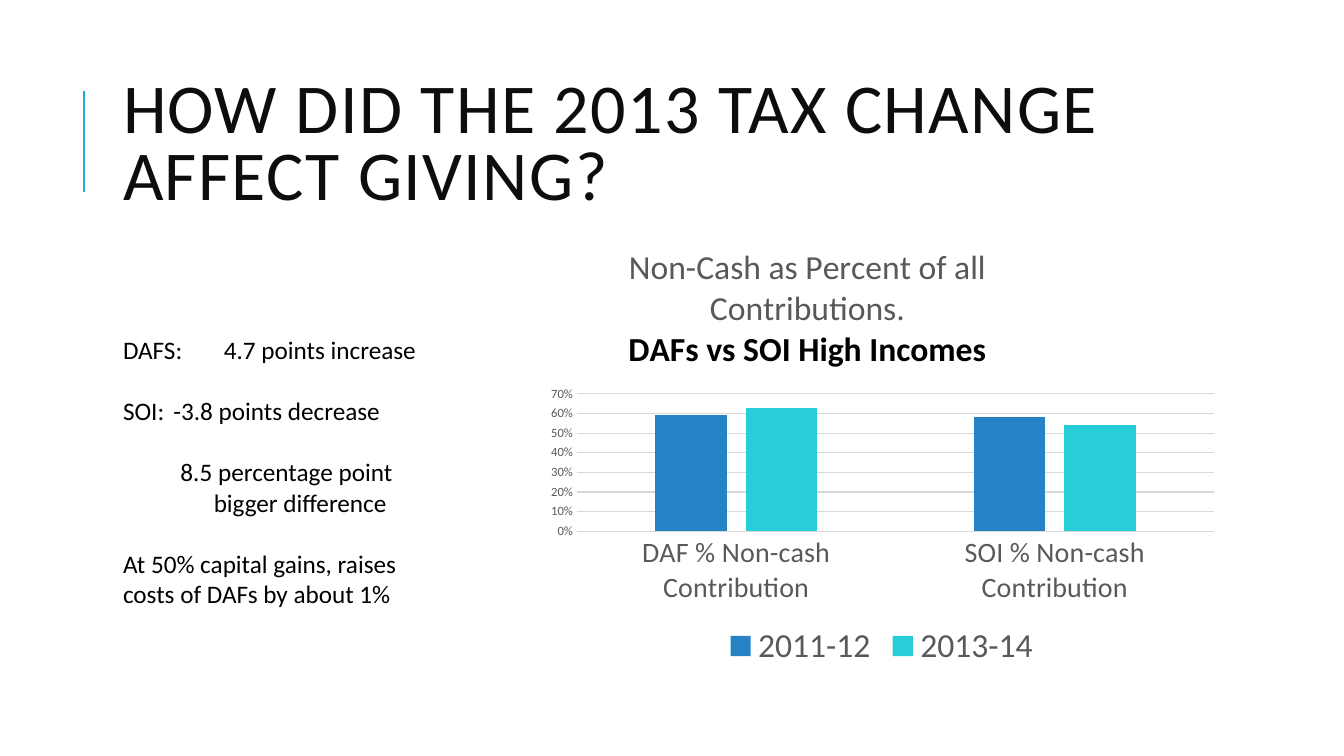
from lxml import etree
from pptx import Presentation
from pptx.chart.data import CategoryChartData
from pptx.dml.color import RGBColor
from pptx.enum.chart import XL_CHART_TYPE, XL_LEGEND_POSITION, XL_TICK_MARK
from pptx.enum.shapes import MSO_CONNECTOR
from pptx.enum.text import MSO_ANCHOR, MSO_AUTO_SIZE, PP_ALIGN
from pptx.oxml.ns import qn
from pptx.util import Pt

COLUMNS = XL_CHART_TYPE.COLUMN_CLUSTERED
BOTTOM = XL_LEGEND_POSITION.BOTTOM
NO_TICK = XL_TICK_MARK.NONE
STRAIGHT = MSO_CONNECTOR.STRAIGHT
TOP, MIDDLE = MSO_ANCHOR.TOP, MSO_ANCHOR.MIDDLE
NO_AUTOFIT = MSO_AUTO_SIZE.NONE
LEFT, CENTER = PP_ALIGN.LEFT, PP_ALIGN.CENTER

FONT = "Calibri"
GREY, GRID = "595959", "D9D9D9"
LINE_HEIGHT = 22  # points, one line of body text

# text, left margin, first-line indent, tab stop (px), lines of space before
FINDINGS = [
    ("DAFS:\t4.7 points increase", 0, 0, 70, 0),
    ("SOI:\t-3.8 points decrease", 0, 0, 58, 1),
    ("8.5 percentage point\vbigger difference", 90, -33, None, 1),
    ("At 50% capital gains, raises costs of DAFs by about 1%", 0, 0, None, 1),
]
CATEGORIES = ["DAF % Non-cash Contribution", "SOI % Non-cash Contribution"]
SERIES = [
    ("2011-12", (0.59, 0.58), "2683C6"),
    ("2013-14", (0.63, 0.54), "27CED7"),
]
CHART_TITLE = [
    ("Non-Cash as Percent of all", GREY, False),
    ("Contributions.", GREY, False),
    ("DAFs vs SOI High Incomes", "000000", True),
]


def px(n):
    return n * 9144  # 100 px to the inch


def rgb(value):
    return RGBColor.from_string(value)


def set_attrs(obj, values):
    for name, value in values.items():
        setattr(obj, name, value)


def style_font(font, size, color, bold=False):
    set_attrs(font, {"name": FONT, "size": Pt(size), "bold": bold})
    font.color.rgb = rgb(color)


def style_line(line, color, width):
    line.color.rgb = rgb(color)
    line.width = Pt(width)


def place(sp, left, top, width, height, anchor):
    set_attrs(sp, {"left": px(left), "top": px(top),
                   "width": px(width), "height": px(height)})
    tf = sp.text_frame
    set_attrs(tf, {"word_wrap": True, "auto_size": NO_AUTOFIT,
                   "vertical_anchor": anchor})
    return tf


def add_rule(s, x, top, bottom):
    rule = s.shapes.add_connector(STRAIGHT, px(x), px(top), px(x), px(bottom))
    style_line(rule.line, "1CADE4", 1.5)
    etree.SubElement(rule._element.spPr, qn("a:effectLst"))


def add_title(s, text):
    tf = place(s.shapes.title, 112, 64, 1063, 164, MIDDLE)
    p = tf.paragraphs[0]
    set_attrs(p, {"text": text, "alignment": LEFT, "line_spacing": 0.8})
    style_font(p.runs[0].font, 50, "0D0D0D")
    p.runs[0].font._element.set("spc", "100")


def add_findings(s):
    tf = place(s.placeholders[1], 112, 327, 329, 283, TOP)
    for i, (text, margin, indent, tab, gap) in enumerate(FINDINGS):
        p = tf.add_paragraph() if i else tf.paragraphs[0]
        set_attrs(p, {"text": text, "alignment": LEFT,
                      "space_before": Pt(gap * LINE_HEIGHT)})
        for r in p.runs:
            style_font(r.font, 18, "000000")
        # Plain paragraphs with indents and tab stops
        pPr = p._p.get_or_add_pPr()
        pPr.set("marL", str(px(margin)))
        pPr.set("indent", str(px(indent)))
        etree.SubElement(pPr, qn("a:buNone"))
        if tab:
            tabs = etree.SubElement(pPr, qn("a:tabLst"))
            etree.SubElement(tabs, qn("a:tab"), pos=str(px(tab)), algn="l")


def set_layout(parent, index, **values):
    """Fix the place of a chart part, in fractions of the chart."""
    for old in parent.findall(qn("c:layout")):
        parent.remove(old)
    layout = etree.Element(qn("c:layout"))
    manual = etree.SubElement(layout, qn("c:manualLayout"))
    for name, value in values.items():
        etree.SubElement(manual, qn("c:" + name), val=str(value))
    parent.insert(index, layout)


def add_chart_title(chart):
    tf = chart.chart_title.text_frame
    for i, (text, color, bold) in enumerate(CHART_TITLE):
        p = tf.add_paragraph() if i else tf.paragraphs[0]
        set_attrs(p, {"text": text, "alignment": CENTER})
        style_font(p.runs[0].font, 24, color, bold)
    chart.chart_title.include_in_layout = False
    set_layout(chart.chart_title._element, 1,
               xMode="edge", yMode="edge", x=0.13, y=0.03)


def style_axes(chart):
    cat, val = chart.category_axis, chart.value_axis
    for axis, size in ((cat, 20), (val, 9)):
        set_attrs(axis, {"major_tick_mark": NO_TICK, "minor_tick_mark": NO_TICK})
        style_font(axis.tick_labels.font, size, GREY)
    style_line(cat.format.line, GRID, 0.75)
    val.format.line.fill.background()
    set_attrs(val, {"minimum_scale": 0, "maximum_scale": 0.7, "major_unit": 0.1})
    set_attrs(val.tick_labels, {"number_format": "0%",
                                "number_format_is_linked": False})
    style_line(val.major_gridlines.format.line, GRID, 0.75)


def add_giving_chart(s):
    data = CategoryChartData(number_format="0%")
    data.categories = CATEGORIES
    for name, values, _ in SERIES:
        data.add_series(name, values)
    chart = s.shapes.add_chart(COLUMNS, px(531), px(228), px(687), px(440),
                               data).chart
    style_font(chart.font, 10, "000000")
    add_chart_title(chart)
    style_axes(chart)

    # Columns
    plot = chart.plots[0]
    set_attrs(plot, {"gap_width": 219, "overlap": -27, "vary_by_categories": False})
    for series, (_, _, color) in zip(plot.series, SERIES):
        series.format.fill.solid()
        series.format.fill.fore_color.rgb = rgb(color)
    set_layout(chart._chartSpace.chart.plotArea, 0, layoutTarget="inner",
               xMode="edge", yMode="edge", x=0.06, y=0.37, w=0.92, h=0.31)

    # Legend
    chart.has_legend = True
    set_attrs(chart.legend, {"position": BOTTOM, "include_in_layout": False})
    style_font(chart.legend.font, 24, GREY)


def main():
    prs = Presentation()
    set_attrs(prs, {"slide_width": px(1333), "slide_height": px(750)})
    s = prs.slides.add_slide(prs.slide_layouts[1])
    add_rule(s, 83, 90, 190)
    add_title(s, "HOW DID THE 2013 TAX CHANGE AFFECT GIVING?")
    add_giving_chart(s)
    add_findings(s)
    prs.save("out.pptx")


if __name__ == "__main__":
    main()
